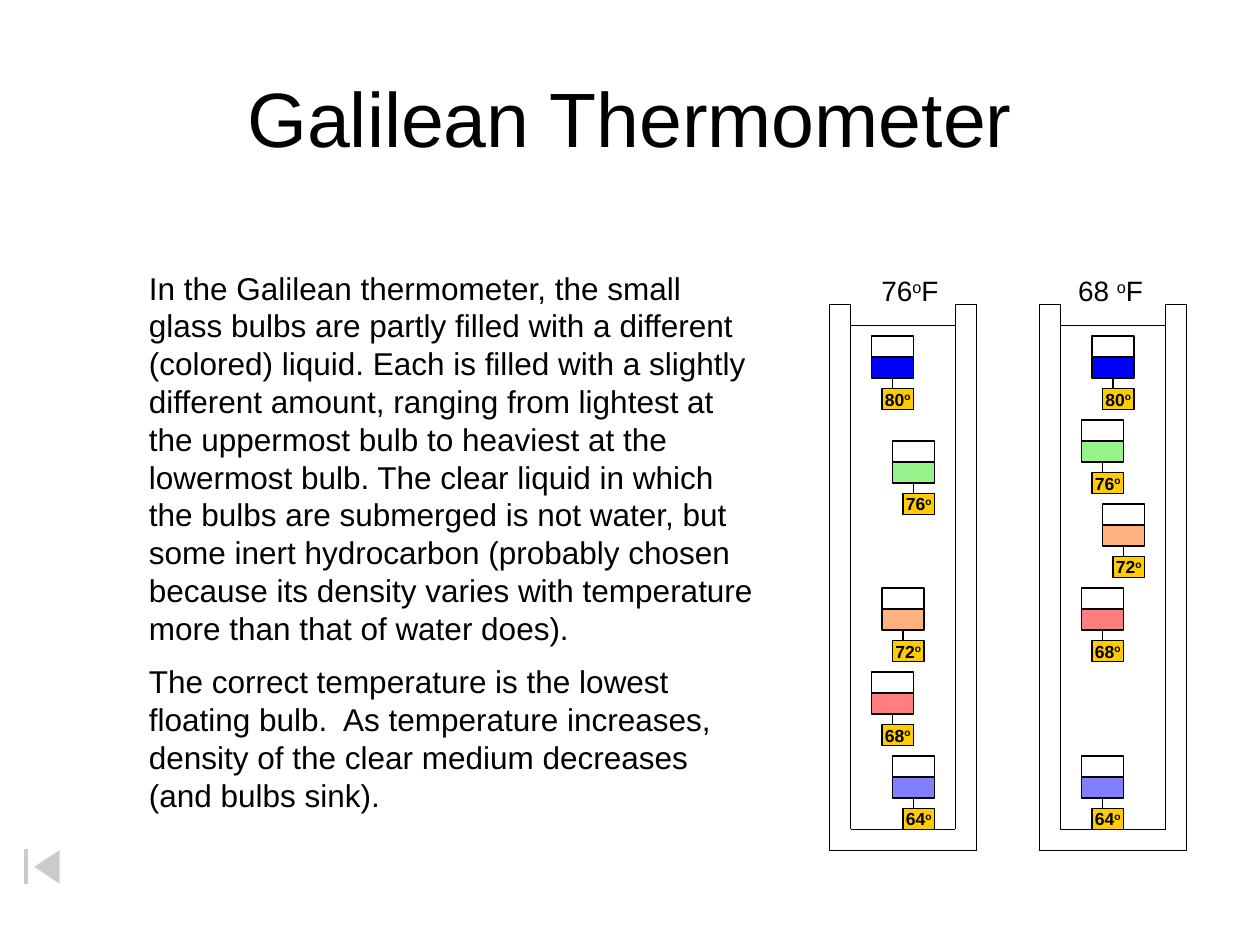
from itertools import pairwise

from lxml import etree
from pptx import Presentation
from pptx.dml.color import RGBColor
from pptx.enum.shapes import MSO_CONNECTOR, MSO_SHAPE
from pptx.enum.text import MSO_ANCHOR, PP_ALIGN
from pptx.oxml.ns import qn
from pptx.util import Pt

RECTANGLE = MSO_SHAPE.RECTANGLE
BACK_BUTTON = MSO_SHAPE.ACTION_BUTTON_BEGINNING
STRAIGHT = MSO_CONNECTOR.STRAIGHT
LEFT, CENTER = PP_ALIGN.LEFT, PP_ALIGN.CENTER
TOP, MIDDLE = MSO_ANCHOR.TOP, MSO_ANCHOR.MIDDLE

PX = 9525  # EMU in one px, 96 px to the inch


class Theme:
    font = "Arial"
    ink = "000000"
    white = "FFFFFF"
    tag = "FFCC00"
    title_size = 44
    body_size = 18
    heading_size = 16
    tag_size = 10
    line_width = 0.75
    # reading: (liquid colour, opacity in percent)
    liquids = {
        "80": ("0000FF", 100),
        "76": ("96F28A", 100),
        "72": ("FF6600", 50),
        "68": ("FF0000", 50),
        "64": ("0000FF", 50),
    }


def write(box, paragraphs, size, bold=False, align=LEFT, anchor=TOP, wrap=True, before=0):
    """Fill a box with paragraphs; in each, text between ^ marks is raised."""
    frame = box.text_frame
    frame.word_wrap = wrap
    frame.vertical_anchor = anchor
    for number, text in enumerate(paragraphs):
        para = frame.add_paragraph() if number else frame.paragraphs[0]
        para.alignment = align
        para.space_before = Pt(before)
        for position, part in enumerate(text.split("^")):
            if not part:
                continue
            span = para.add_run()
            span.text = part
            span.font.name = Theme.font
            span.font.size = Pt(size)
            span.font.bold = bold
            span.font.color.rgb = RGBColor.from_string(Theme.ink)
            if position % 2:
                span.font._element.set("baseline", "30000")


def add_block(kind, left, top, width, height, fill, line=Theme.ink, opacity=100):
    block = page.shapes.add_shape(kind, left * PX, top * PX, width * PX, height * PX)
    block.shadow.inherit = False
    block.fill.solid()
    block.fill.fore_color.rgb = RGBColor.from_string(fill)
    block.line.color.rgb = RGBColor.from_string(line)
    block.line.width = Pt(Theme.line_width)
    if opacity < 100:
        color = block._element.spPr.find(qn("a:solidFill")).find(qn("a:srgbClr"))
        etree.SubElement(color, qn("a:alpha")).set("val", str(opacity * 1000))
    return block


deck = Presentation()
deck.slide_width, deck.slide_height = 960 * PX, 720 * PX
page = deck.slides.add_slide(deck.slide_layouts[6])

title = page.shapes.add_textbox(48 * PX, 29 * PX, 864 * PX, 120 * PX)
write(title, ["Galilean Thermometer"], Theme.title_size, align=CENTER, anchor=MIDDLE)

body = page.shapes.add_textbox(104 * PX, 200 * PX, 480 * PX, 431 * PX)
write(
    body,
    [
        "In the Galilean thermometer, the small glass bulbs are partly filled with a "
        "different (colored) liquid. Each is filled with a slightly different amount, "
        "ranging from lightest at the uppermost bulb to heaviest at the lowermost bulb. "
        "The clear liquid in which the bulbs are submerged is not water, but some inert "
        "hydrocarbon (probably chosen because its density varies with temperature more "
        "than that of water does).",
        "The correct temperature is the lowest floating bulb.  As temperature increases, "
        "density of the clear medium decreases (and bulbs sink).",
    ],
    Theme.body_size,
    before=9,
)

# Tubes: heading, heading left, tube left, bulb positions from hottest to coldest
tubes = [
    ("76^o^F", 662, 632, [(664, 256), (680, 336), (672, 448), (664, 512), (680, 576)]),
    ("68 ^o^F", 812, 792, [(832, 256), (824, 320), (840, 384), (824, 448), (824, 576)]),
]
tube_width, wall = 112, 16
rim, surface, floor = 232, 248, 632
bulb_width, half_height, stem_height = 32, 16, 8
tag_width, tag_height = 24, 16

segments = []
for heading, heading_left, outer_left, bulbs in tubes:
    heading_box = page.shapes.add_textbox(heading_left * PX, 204 * PX, 80 * PX, 36 * PX)
    write(heading_box, [heading], Theme.heading_size, wrap=False)

    outer_right = outer_left + tube_width
    inner_left, inner_right = outer_left + wall, outer_right - wall
    outline = [
        (outer_left, rim), (inner_left, rim), (inner_left, floor), (inner_right, floor),
        (inner_right, rim), (outer_right, rim), (outer_right, floor + wall),
        (outer_left, floor + wall), (outer_left, rim),
    ]
    segments += pairwise(outline)
    segments.append(((inner_left, surface), (inner_right, surface)))

    for (reading, (color, opacity)), (left, top) in zip(Theme.liquids.items(), bulbs):
        add_block(RECTANGLE, left, top, bulb_width, half_height, Theme.white)
        add_block(RECTANGLE, left, top + half_height, bulb_width, half_height, color,
                  opacity=opacity)
        middle, bottom = left + bulb_width // 2, top + 2 * half_height
        tag_top = bottom + stem_height
        segments.append(((middle, bottom), (middle, tag_top)))
        tag = add_block(RECTANGLE, left + 8, tag_top, tag_width, tag_height, Theme.tag)
        write(tag, [f"{reading}^o^"], Theme.tag_size, bold=True, align=CENTER,
              anchor=MIDDLE, wrap=False)

for start, end in segments:
    line = page.shapes.add_connector(STRAIGHT, *(value * PX for value in start + end))
    line.line.color.rgb = RGBColor.from_string(Theme.ink)
    line.line.width = Pt(Theme.line_width)
    etree.SubElement(line._element.spPr, qn("a:effectLst"))

add_block(BACK_BUTTON, 0, 642, 64, 37, Theme.white, line=Theme.white, opacity=50)

deck.save("out.pptx")
